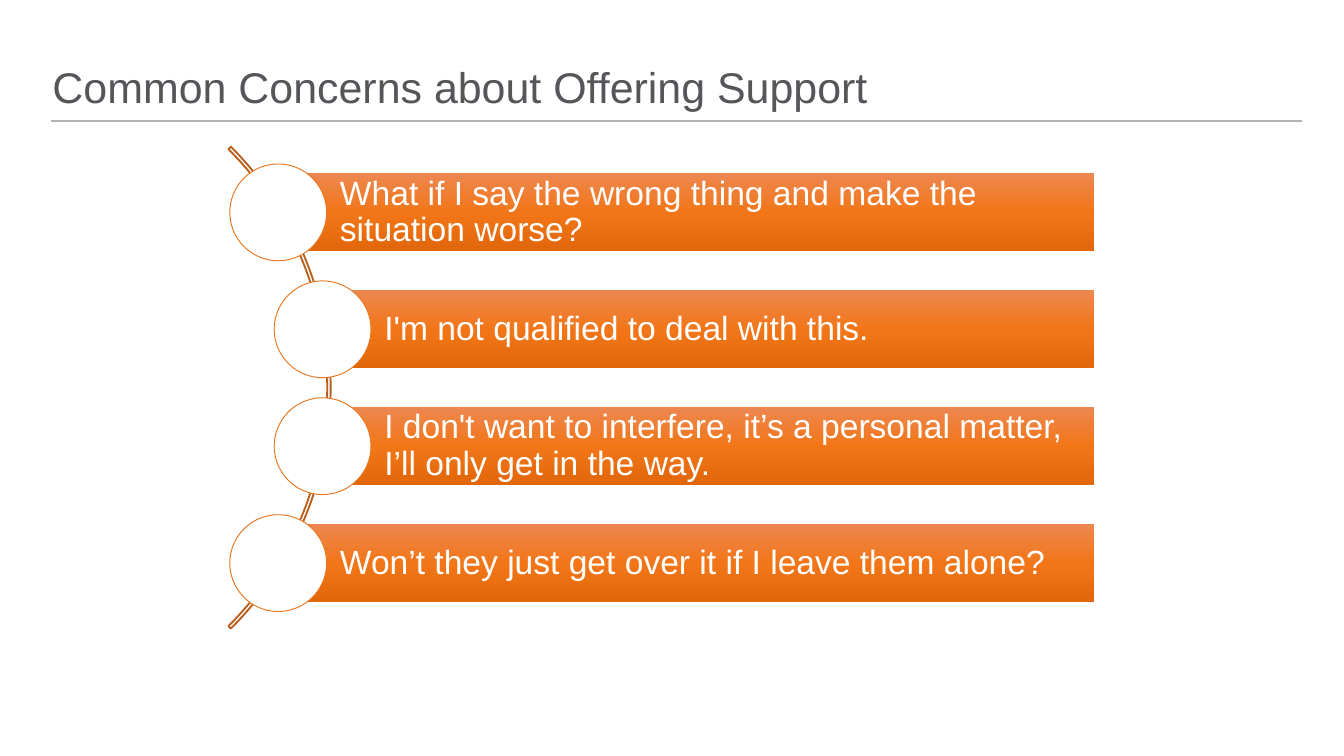
"""Build the slide on common concerns about offering support."""
from copy import deepcopy
from dataclasses import dataclass

from lxml import etree
from pptx import Presentation
from pptx.dml.color import RGBColor
from pptx.enum.shapes import MSO_CONNECTOR, MSO_SHAPE
from pptx.enum.text import MSO_ANCHOR, MSO_AUTO_SIZE, PP_ALIGN
from pptx.oxml.ns import qn
from pptx.util import Inches, Pt

STRAIGHT = MSO_CONNECTOR.STRAIGHT
RECTANGLE, OVAL, BLOCK_ARC = MSO_SHAPE.RECTANGLE, MSO_SHAPE.OVAL, MSO_SHAPE.BLOCK_ARC
BOTTOM, MIDDLE = MSO_ANCHOR.BOTTOM, MSO_ANCHOR.MIDDLE
NO_AUTOFIT = MSO_AUTO_SIZE.NONE
LEFT = PP_ALIGN.LEFT

CONCERNS = [
    (2.07, "What if I say the wrong thing and make the situation worse?"),
    (2.4, "I'm not qualified to deal with this."),
    (2.4, "I don't want to interfere, it’s a personal matter, I’ll only get in the way."),
    (2.07, "Won’t they just get over it if I leave them alone?"),
]
BAR_TOP, BAR_PITCH, BAR_HEIGHT, BAR_RIGHT = 1.29, 0.87, 0.58, 8.14
CIRCLE_SIZE = 0.72


@dataclass(frozen=True)
class Theme:
    """Colours, font and type sizes of the slide."""

    font: str = "Arial"
    title_size: int = 23
    body_size: int = 18
    title: str = "55565A"
    rule: str = "B1B3B3"
    arc: str = "BA5F1B"
    accent: str = "E87722"
    white: str = "FFFFFF"
    bar: tuple = ((0, "ED8750"), (0.5, "F27618"), (1, "E2670A"))


class SlideBuilder:
    """Draw styled elements on one slide."""

    def __init__(self, slide, theme):
        """Keep the slide and its theme."""
        self.slide = slide
        self.theme = theme

    def set_text(self, sp, text, size, color, anchor, margins):
        """Write one left-aligned paragraph into a shape."""
        tf = sp.text_frame
        tf.text = text
        tf.word_wrap = True
        tf.auto_size = NO_AUTOFIT
        tf.vertical_anchor = anchor
        tf.margin_left, tf.margin_top, tf.margin_right, tf.margin_bottom = map(Inches, margins)
        p = tf.paragraphs[0]
        p.alignment = LEFT
        p.line_spacing = 0.9
        font = p.runs[0].font
        font.name = self.theme.font
        font.size = Pt(size)
        font.color.rgb = RGBColor.from_string(color)

    def set_line(self, sp, color, width):
        """Give a shape or connector a solid line."""
        sp.line.color.rgb = RGBColor.from_string(color)
        sp.line.width = Pt(width)

    def title(self, text, left, top, width, height):
        """Place and fill the title placeholder."""
        sp = self.slide.shapes.title
        sp.left, sp.top, sp.width, sp.height = map(Inches, (left, top, width, height))
        self.set_text(sp, text, self.theme.title_size, self.theme.title, BOTTOM, (0, 0, 0, 0))

    def rule(self, left, right, y):
        """Draw a horizontal rule."""
        line = self.slide.shapes.add_connector(STRAIGHT, *map(Inches, (left, y, right, y)))
        self.set_line(line, self.theme.rule, 1)
        etree.SubElement(line._element.spPr, qn("a:effectLst"))

    def shape(self, kind, left, top, width, height):
        """Add a preset shape without a shadow."""
        sp = self.slide.shapes.add_shape(kind, *map(Inches, (left, top, width, height)))
        sp.shadow.inherit = False
        return sp

    def arc(self, left, top, size):
        """Draw the thin arc that links the circles."""
        sp = self.shape(BLOCK_ARC, left, top, size, size)
        for i, value in enumerate((189, 27, 0.005)):
            sp.adjustments[i] = value
        sp.fill.background()
        self.set_line(sp, self.theme.arc, 1)

    def bar(self, text, left, top, width, height):
        """Draw a gradient bar with its text."""
        sp = self.shape(RECTANGLE, left, top, width, height)
        sp.line.fill.background()
        sp.fill.gradient()
        sp.fill.gradient_angle = 270
        stops = sp._element.spPr.find(qn("a:gradFill")).find(qn("a:gsLst"))
        stops.append(deepcopy(stops[0]))
        for stop, (position, color) in zip(sp.fill.gradient_stops, self.theme.bar):
            stop.position = position
            stop.color.rgb = RGBColor.from_string(color)
        self.set_text(sp, text, self.theme.body_size, self.theme.white, MIDDLE,
                      (0.46, 0.05, 0.05, 0.05))

    def circle(self, center_x, center_y, size):
        """Draw a white circle around a centre point."""
        sp = self.shape(OVAL, center_x - size / 2, center_y - size / 2, size, size)
        sp.fill.solid()
        sp.fill.fore_color.rgb = RGBColor.from_string(self.theme.white)
        self.set_line(sp, self.theme.accent, 0.5)


def main():
    """Build and save the presentation."""
    prs = Presentation()
    prs.slide_width = Inches(10)
    prs.slide_height = prs.slide_width * 9 // 16
    s = SlideBuilder(prs.slides.add_slide(prs.slide_layouts[5]), Theme())
    s.rule(0.38, 9.69, 0.9)
    s.title("Common Concerns about Offering Support", 0.39, 0.48, 6.75, 0.36)
    s.arc(-2.61, 0.35, 5.07)
    for i, (left, text) in enumerate(CONCERNS):
        top = BAR_TOP + i * BAR_PITCH
        s.bar(text, left, top, BAR_RIGHT - left, BAR_HEIGHT)
        s.circle(left, top + BAR_HEIGHT / 2, CIRCLE_SIZE)
    prs.save("out.pptx")


if __name__ == "__main__":
    main()
